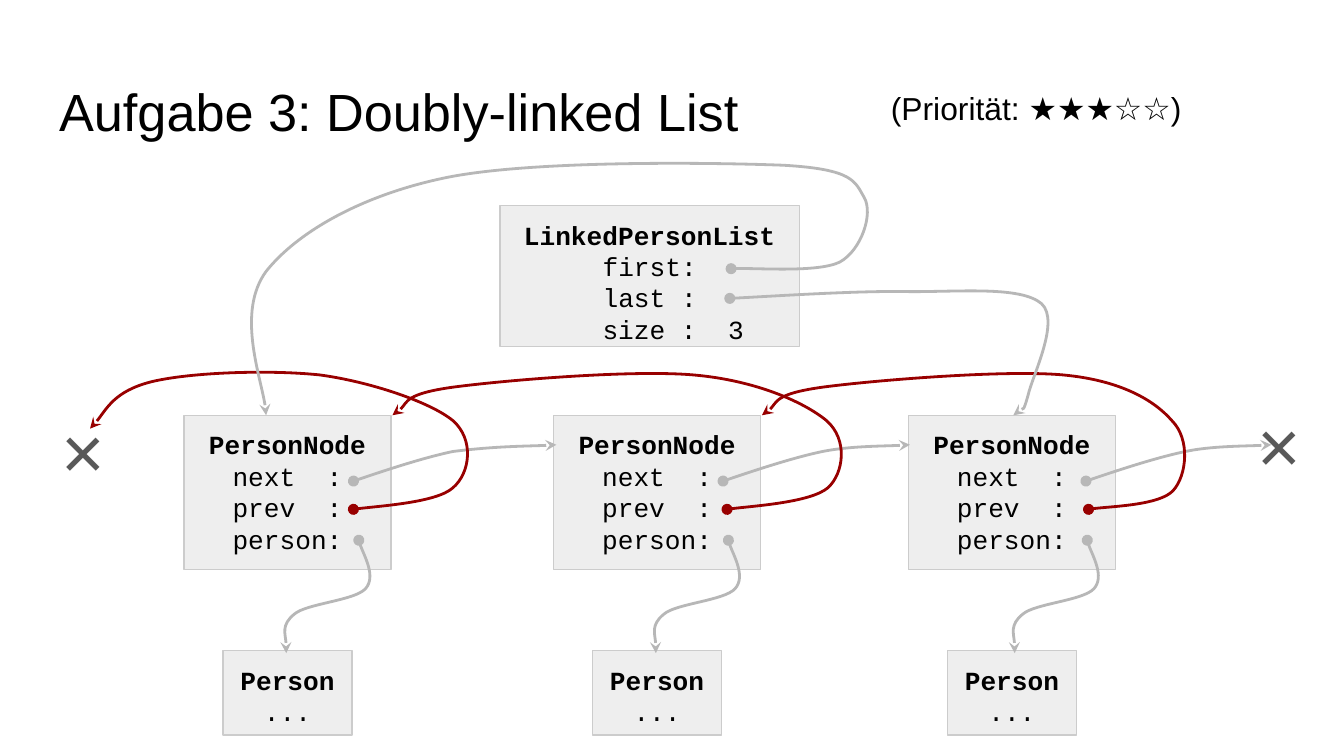
from pptx import Presentation
from pptx.dml.color import RGBColor
from pptx.enum.shapes import MSO_SHAPE as SHAPE
from pptx.enum.text import MSO_ANCHOR as ANCHOR, MSO_AUTO_SIZE as AUTO, PP_ALIGN as ALIGN
from pptx.oxml.ns import qn
from pptx.util import Pt
from lxml.etree import SubElement

PX = 9144  # EMU in one px, 100 px to the inch
GREY, RED = "B7B7B7", "980000"


def rgb(code):
    return RGBColor.from_string(code)


class Diagram:
    sans, mono = "Arial", "Courier New"
    ink, box_fill, box_line = "000000", "EEEEEE", "CCCCCC"
    inset = 10

    def __init__(self, slide):
        self.s = slide

    def frame(self, sp):
        tf = sp.text_frame
        tf.margin_left = tf.margin_right = self.inset * PX
        tf.margin_top = tf.margin_bottom = self.inset * PX
        tf.vertical_anchor = ANCHOR.TOP
        tf.auto_size = AUTO.NONE
        tf.word_wrap = True
        return tf

    def run(self, p, text, size, font, color=None, bold=False):
        r = p.add_run()
        r.text = text
        r.font.size = Pt(size)
        r.font.name = font
        r.font.bold = bold
        r.font.color.rgb = rgb(color or self.ink)

    def title(self, text, x, y, w, h):
        sp = self.s.shapes.title
        sp.left, sp.top, sp.width, sp.height = (v * PX for v in (x, y, w, h))
        p = self.frame(sp).paragraphs[0]
        p.alignment = ALIGN.LEFT
        self.run(p, text, 28, self.sans)

    def label(self, text, x, y, w, h, size, color=None):
        sp = self.s.shapes.add_textbox(x * PX, y * PX, w * PX, h * PX)
        tf = self.frame(sp)
        self.run(tf.paragraphs[0], text, size, self.sans, color)
        return tf

    def record(self, name, fields, x, y, w, h):
        """Box with a bold class name over its fields; returns the text frame."""
        sp = self.s.shapes.add_shape(SHAPE.RECTANGLE, x * PX, y * PX, w * PX, h * PX)
        sp.shadow.inherit = False
        sp.fill.solid()
        sp.fill.fore_color.rgb = rgb(self.box_fill)
        sp.line.color.rgb = rgb(self.box_line)
        sp.line.width = Pt(0.75)
        tf = self.frame(sp)
        for i, text in enumerate([name, *fields]):
            p = tf.add_paragraph() if i else tf.paragraphs[0]
            p.alignment = ALIGN.CENTER
            self.run(p, text, 14, self.mono, bold=i == 0)
        return tf

    def pointer(self, points, color=GREY, dx=0):
        """Bézier arrow: a start point, then two control points and an end per curve."""
        points = [((x + dx) * PX, y * PX) for x, y in points]
        fb = self.s.shapes.build_freeform(*points[0])
        fb.add_line_segments(points[3::3], close=False)
        sp = fb.convert_to_shape()
        lines = list(sp._element.iter(qn("a:lnTo")))
        for i, line in enumerate(lines):
            line.tag = qn("a:cubicBezTo")
            line.remove(line[0])
            for x, y in points[3 * i + 1:3 * i + 4]:
                SubElement(line, qn("a:pt"), x=str(x - sp.left), y=str(y - sp.top))
        sp.shadow.inherit = False
        sp.fill.background()
        sp.line.color.rgb = rgb(color)
        sp.line.width = Pt(1.5)
        ln = sp._element.spPr.find(qn("a:ln"))
        SubElement(ln, qn("a:headEnd"), type="oval")
        SubElement(ln, qn("a:tailEnd"), type="stealth")


PERSON = [(267, 402), (268, 408), (280, 429), (272, 438), (264, 447), (228, 449),
          (219, 457), (209, 465), (214, 481), (213, 486)]
PREV = [
    [(263, 379), (275, 377), (325, 374), (337, 363), (350, 352), (353, 327),
     (337, 313), (320, 299), (275, 284), (238, 279), (200, 275), (142, 277),
     (113, 284), (85, 291), (74, 313), (67, 319)],
    [(541, 379), (553, 377), (603, 374), (616, 363), (628, 352), (631, 327),
     (615, 313), (598, 299), (562, 283), (516, 279), (470, 275), (376, 283),
     (338, 288), (301, 293), (300, 306), (292, 309)],
    [(810, 379), (820, 377), (863, 376), (873, 365), (883, 354), (886, 327),
     (872, 313), (859, 298), (834, 283), (791, 279), (748, 275), (651, 283),
     (613, 288), (576, 293), (575, 306), (567, 309)],
]
FIRST = [(544, 200), (558, 199), (609, 203), (625, 195), (641, 186), (650, 159),
         (643, 147), (636, 135), (635, 126), (583, 123), (532, 121), (398, 119),
         (333, 132), (269, 145), (221, 173), (198, 202), (176, 232), (198, 292),
         (198, 309)]
LAST = [(543, 222), (566, 221), (640, 216), (678, 217), (717, 217), (760, 213),
        (775, 226), (789, 239), (768, 280), (765, 294), (761, 308), (756, 307),
        (754, 309)]
NODE_X = [137, 412, 676]
NEXT_SPANS = [(263, 414), (538, 677), (808, 946)]
PERSON_SHIFTS = [0, 275, 542]


def main():
    prs = Presentation()
    prs.slide_width = 1000 * PX
    prs.slide_height = prs.slide_width * 9 // 16
    d = Diagram(prs.slides.add_slide(prs.slide_layouts[5]))

    d.title("Aufgabe 3: Doubly-linked List", 34, 49, 932, 63)
    tf = d.label("(Priorität: ★★★☆☆)", 653, 56, 328, 49, 17)
    tf.auto_size = AUTO.SHAPE_TO_FIT_TEXT

    tf = d.record("LinkedPersonList", ["first:", "last :", "size :  3"], 372, 153, 223, 105)
    tf.paragraphs[-1]._p.get_or_add_pPr().set("marL", str(35 * PX))
    for x in NODE_X:
        d.record("PersonNode", ["next  :", "prev  :", "person:"], x, 309, 154, 115)
        d.record("Person", ["..."], x + 29, 484, 96, 63)

    for x, y in [(36, 291), (926, 287)]:
        d.label("×", x, y, 47, 53, 40, "595959")

    for shift in PERSON_SHIFTS:
        d.pointer(PERSON, dx=shift)
    for start, end in NEXT_SPANS:
        d.pointer([(start, 358), (start + 12, 354), (start + 50, 341), (start + 74, 336),
                   (end - 45, 332), (end - 12, 332), (end, 331)])
    for points in PREV:
        d.pointer(points, RED)
    d.pointer(FIRST)
    d.pointer(LAST)

    prs.save("out.pptx")


if __name__ == "__main__":
    main()
